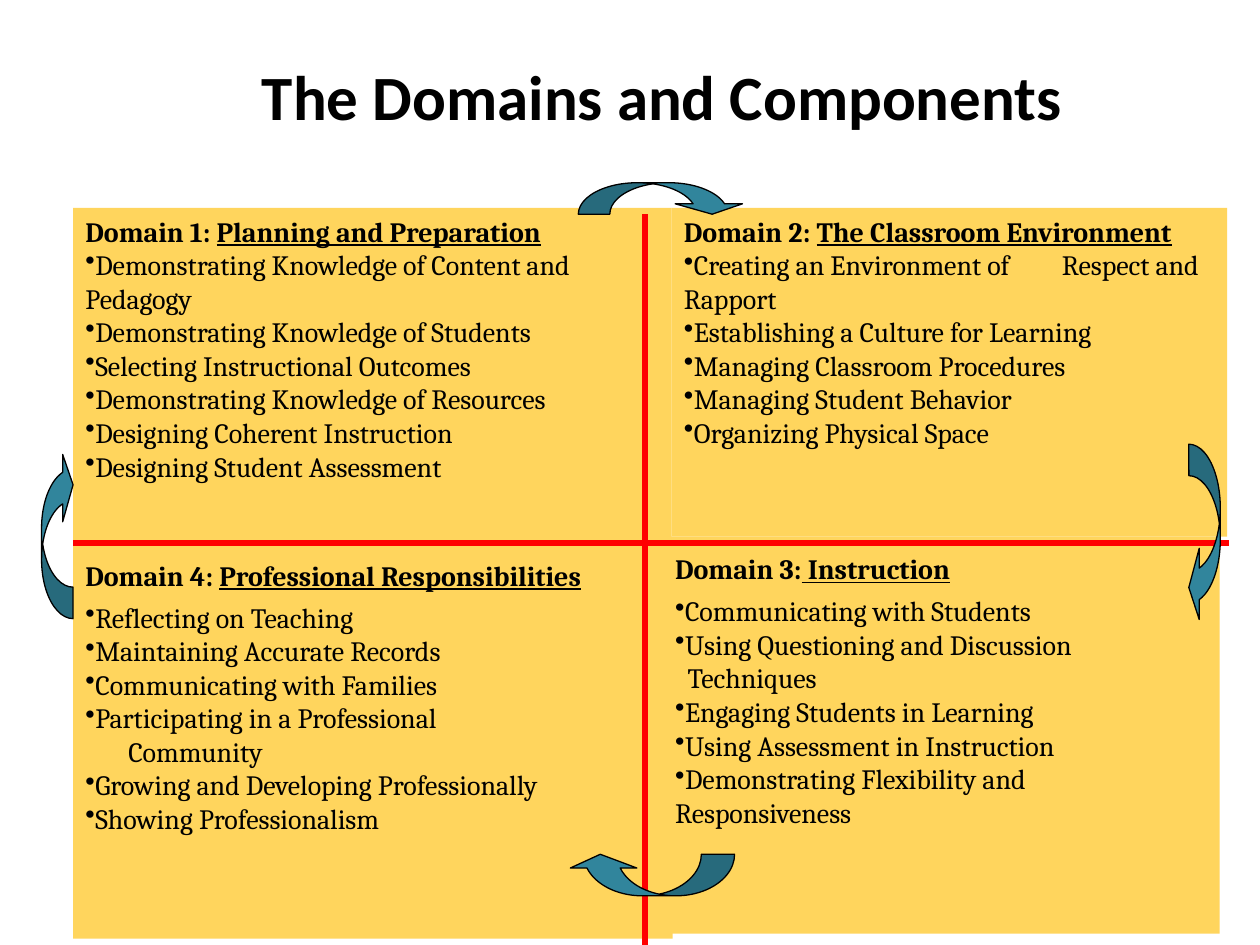
from lxml import etree
from pptx import Presentation
from pptx import util as u
from pptx.dml.color import RGBColor
from pptx.enum import shapes, text
from pptx.oxml import ns

BLACK = RGBColor(0x00, 0x00, 0x00)
GOLD = RGBColor(0xFF, 0xD5, 0x5D)
RED = RGBColor(0xFF, 0x00, 0x00)
TEAL = RGBColor(0x31, 0x85, 0x9C)

TITLE = "The Domains and Components"
BULLET = None

DOMAINS = [
    {"at": (0.58, 4.31, 4.76, 3.14), "top": 0.12, "after": 4.8,
     "heading": ("Domain 4: ", "Professional Responsibilities"),
     "items": [(BULLET, "Reflecting on Teaching"),
               (BULLET, "Maintaining Accurate Records"),
               (BULLET, "Communicating with Families"),
               (BULLET, "Participating in a Professional"),
               (0.34, "Community"),
               (BULLET, "Growing and Developing Professionally"),
               (BULLET, "Showing Professionalism")]},
    {"at": (5.26, 4.26, 4.42, 3.15), "top": 0.12, "after": 4.8,
     "heading": ("Domain 3:", " Instruction"),
     "items": [(BULLET, "Communicating with Students"),
               (BULLET, "Using Questioning and Discussion"),
               (0.1, "Techniques"),
               (BULLET, "Engaging Students in Learning"),
               (BULLET, "Using Assessment in Instruction"),
               (BULLET, "Demonstrating Flexibility and\tResponsiveness")]},
    {"at": (0.58, 1.65, 4.75, 2.66), "top": 0.05, "after": 0,
     "heading": ("Domain 1: ", "Planning and Preparation"),
     "items": [(BULLET, "Demonstrating Knowledge of Content\tand Pedagogy"),
               (BULLET, "Demonstrating Knowledge of Students"),
               (BULLET, "Selecting Instructional Outcomes"),
               (BULLET, "Demonstrating Knowledge of Resources"),
               (BULLET, "Designing Coherent Instruction"),
               (BULLET, "Designing Student Assessment")]},
    {"at": (5.33, 1.65, 4.41, 2.61), "top": 0.05, "after": 0,
     "heading": ("Domain 2: ", "The Classroom Environment"),
     "items": [(BULLET, "Creating an Environment of\tRespect and Rapport"),
               (BULLET, "Establishing a Culture for Learning"),
               (BULLET, "Managing Classroom Procedures"),
               (BULLET, "Managing Student Behavior"),
               (BULLET, "Organizing Physical Space")]},
]

DIVIDERS = [(0.58, 4.31, 9.75, 4.31), (5.12, 1.7, 5.12, 7.5)]

ARROWS = [
    ((4.59, 1.45, 1.33, 0.25), 0, 1.07),
    ((8.85, 4.11, 1.42, 0.25), 90, 1.13),
    ((4.5, 6.78, 1.33, 0.33), 180, 0.8),
    ((-0.21, 4.12, 1.33, 0.25), 270, 1.07),
]


def inches(values):
    return [u.Inches(value) for value in values]


def add_span(para, words, font="Cambria", size=16, bold=False, underline=False):
    span = para.add_run()
    span.text = words
    span.font.name = font
    span.font.size = u.Pt(size)
    span.font.bold = bold
    span.font.underline = underline
    span.font.color.rgb = BLACK


def add_preset(page, kind, at, fill):
    shape = page.shapes.add_shape(kind, *inches(at))
    shape.shadow.inherit = False
    shape.fill.solid()
    shape.fill.fore_color.rgb = fill
    return shape


def add_title(page):
    box = page.shapes.add_textbox(*inches((1.13, 0.26, 8.25, 1)))
    frame = box.text_frame
    frame.word_wrap = True
    frame.vertical_anchor = text.MSO_ANCHOR.MIDDLE
    para = frame.paragraphs[0]
    para.alignment = text.PP_ALIGN.CENTER
    add_span(para, TITLE, font="Calibri", size=36, bold=True)


def add_domain(page, domain):
    box = add_preset(page, shapes.MSO_SHAPE.RECTANGLE, domain["at"], GOLD)
    box.line.fill.background()
    frame = box.text_frame
    frame.word_wrap = True
    frame.vertical_anchor = text.MSO_ANCHOR.TOP
    frame.margin_left = frame.margin_right = u.Inches(0.1)
    frame.margin_top = u.Inches(domain["top"])
    frame.margin_bottom = u.Inches(0.05)

    para = frame.paragraphs[0]
    para.alignment = text.PP_ALIGN.LEFT
    para.space_after = u.Pt(domain["after"])
    label, name = domain["heading"]
    add_span(para, label, bold=True)
    add_span(para, name, bold=True, underline=True)

    for indent, words in domain["items"]:
        para = frame.add_paragraph()
        para.alignment = text.PP_ALIGN.LEFT
        add_span(para, words)
        settings = para._p.get_or_add_pPr()
        settings.set("marL", str(u.Inches(indent or 0)))
        settings.set("indent", "0")
        if indent is BULLET:
            etree.SubElement(settings, ns.qn("a:buChar")).set("char", "•")


def add_divider(page, ends):
    line = page.shapes.add_connector(shapes.MSO_CONNECTOR.STRAIGHT, *inches(ends))
    line.line.color.rgb = RED
    line.line.width = u.Pt(3)
    etree.SubElement(line._element.spPr, ns.qn("a:effectLst"))


def add_arrow(page, at, rotation, thickness):
    arrow = add_preset(page, shapes.MSO_SHAPE.CURVED_DOWN_ARROW, at, TEAL)
    arrow.line.color.rgb = BLACK
    arrow.line.width = u.Pt(0.75)
    arrow.rotation = rotation
    for index, value in enumerate((thickness, 2 * thickness, 0.33)):
        arrow.adjustments[index] = value


def main():
    deck = Presentation()
    deck.slide_width, deck.slide_height = inches((10, 7.5))
    page = deck.slides.add_slide(deck.slide_layouts[6])
    add_title(page)
    for domain in DOMAINS:
        add_domain(page, domain)
    for ends in DIVIDERS:
        add_divider(page, ends)
    for at, rotation, thickness in ARROWS:
        add_arrow(page, at, rotation, thickness)
    deck.save("out.pptx")


if __name__ == "__main__":
    main()
